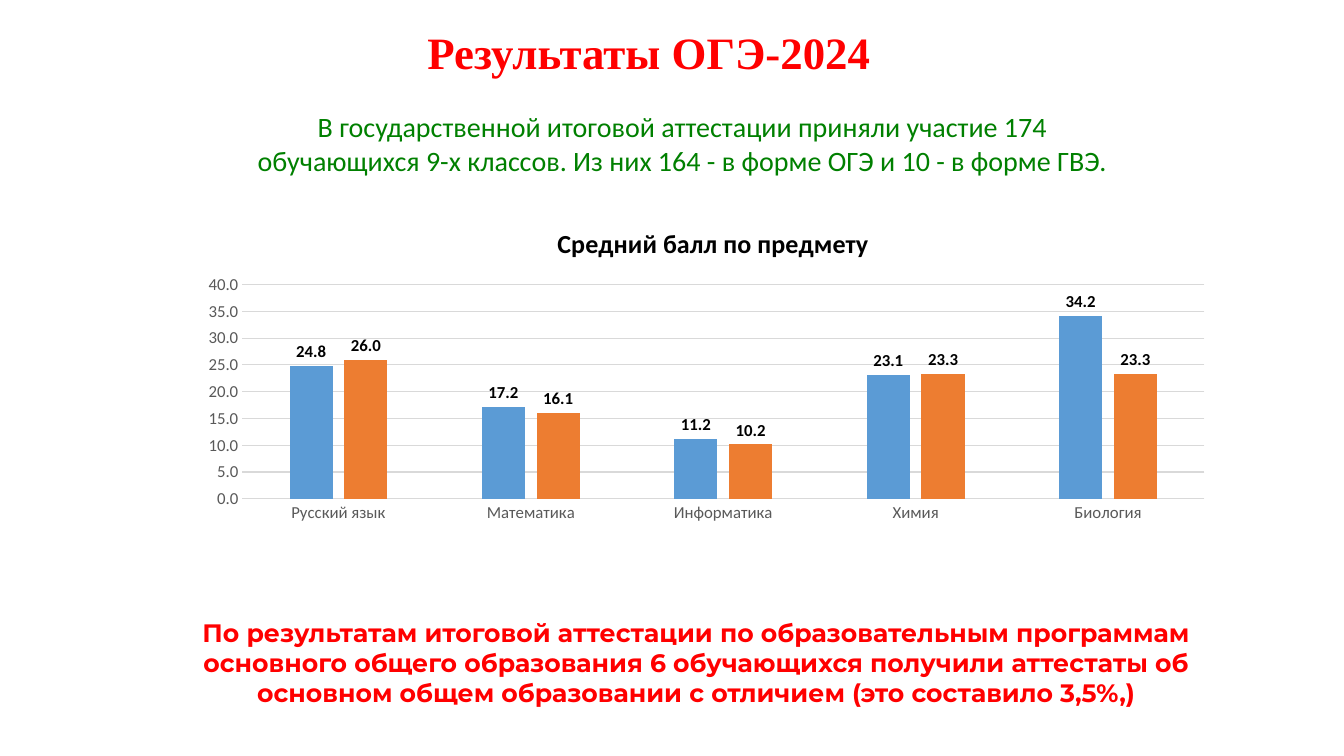
import pptx
import pptx.util
import pptx.chart.data
import pptx.dml.color
import pptx.enum.chart
import pptx.enum.text
import pptx.oxml

WIDTH, HEIGHT = 13.33, 7.5
COLORS = {"red": "FF0000", "green": "008000", "black": "000000", "gray": "595959",
          "grid": "D9D9D9", "blue": "5B9BD5", "orange": "ED7D31"}

TEXTS = [
    {"text": "Результаты ОГЭ-2024", "at": (0.99, 0.23, 10.89, 0.64), "anchor": "MIDDLE",
     "spacing": 0.9, "size": 32, "font": "Times New Roman", "color": "red", "bold": True},
    {"text": "По результатам итоговой аттестации по образовательным программам основного общего "
             "образования 6 обучающихся получили аттестаты об основном общем образовании "
             "с отличием (это составило 3,5%,)",
     "at": (1.78, 6.07, 10.25, 1.31), "anchor": "TOP",
     "spacing": 1.0, "size": 18, "font": "Montserrat", "color": "red", "bold": True},
    {"text": "В государственной итоговой аттестации приняли участие 174 обучающихся 9-х классов. "
             "Из них 164 - в форме ОГЭ и 10 - в форме ГВЭ.",
     "at": (2.44, 1.04, 8.66, 0.77), "anchor": "TOP",
     "spacing": 1.0, "size": 20, "font": "Calibri", "color": "green", "bold": False},
]
CHART_TITLE = "Средний балл по предмету"
CHART_AT = (1.89, 2.04, 10.26, 3.73)
TITLE_SHARE = {"x": 0.35, "y": 0.04}
PLOT_SHARE = {"x": 0.05, "y": 0.21, "w": 0.93, "h": 0.57}
SUBJECTS = ["Русский язык", "Математика", "Информатика", "Химия", "Биология"]
SCORES = {"blue": (24.8, 17.2, 11.2, 23.1, 34.2),
          "orange": (26, 16.1, 10.2, 23.3, 23.3)}


def rgb(name):
    return pptx.dml.color.RGBColor.from_string(COLORS[name])


def inches(lengths):
    return [pptx.util.Inches(length) for length in lengths]


def style(font, size, name, color, bold=False):
    font.size = pptx.util.Pt(size)
    font.name = name
    font.bold = bold
    font.color.rgb = rgb(color)


def add_text(page, item):
    box = page.shapes.add_textbox(*inches(item["at"]))
    frame = box.text_frame
    frame.word_wrap = True
    frame.vertical_anchor = getattr(pptx.enum.text.MSO_ANCHOR, item["anchor"])
    frame.text = item["text"]
    para = frame.paragraphs[0]
    para.alignment = pptx.enum.text.PP_ALIGN.CENTER
    para.line_spacing = item["spacing"]
    style(para.runs[0].font, item["size"], item["font"], item["color"], item["bold"])


def layout_xml(shares, inner=False):
    target = '<c:layoutTarget val="inner"/>' if inner else ""
    modes = '<c:xMode val="edge"/><c:yMode val="edge"/>'
    values = "".join(f'<c:{key} val="{share}"/>' for key, share in shares.items())
    return pptx.oxml.parse_xml(
        '<c:layout xmlns:c="http://schemas.openxmlformats.org/drawingml/2006/chart">'
        f"<c:manualLayout>{target}{modes}{values}</c:manualLayout></c:layout>")


def set_layout(parent, layout, index):
    for old in parent.xpath("./c:layout"):
        parent.remove(old)
    parent.insert(index, layout)


def style_line(line, color):
    line.color.rgb = rgb(color)
    line.width = pptx.util.Pt(0.75)


def add_scores(page):
    data = pptx.chart.data.CategoryChartData(number_format="0.0")
    data.categories = SUBJECTS
    for scores in SCORES.values():
        data.add_series("", scores)
    kind = pptx.enum.chart.XL_CHART_TYPE.COLUMN_CLUSTERED
    chart = page.shapes.add_chart(kind, *inches(CHART_AT), data).chart
    style(chart.font, 10, "Calibri", "black")
    chart.has_legend = False
    chart.has_title = True
    title = chart.chart_title
    title.text_frame.text = CHART_TITLE
    style(title.text_frame.paragraphs[0].runs[0].font, 18.6, "Calibri", "black", True)
    title.include_in_layout = False
    set_layout(title._element, layout_xml(TITLE_SHARE), 1)

    plot = chart.plots[0]
    plot.gap_width = 219
    plot.overlap = -27
    plot.vary_by_categories = False
    for series, color in zip(plot.series, SCORES):
        series.format.fill.solid()
        series.format.fill.fore_color.rgb = rgb(color)
        labels = series.data_labels
        labels.show_value = True
        labels.number_format = "0.0"
        labels.number_format_is_linked = False
        labels.position = pptx.enum.chart.XL_LABEL_POSITION.OUTSIDE_END
        style(labels.font, 12, "Calibri", "black", True)

    for axis in (chart.category_axis, chart.value_axis):
        axis.major_tick_mark = pptx.enum.chart.XL_TICK_MARK.NONE
        axis.minor_tick_mark = pptx.enum.chart.XL_TICK_MARK.NONE
        style(axis.tick_labels.font, 12, "Calibri", "gray")
    style_line(chart.category_axis.format.line, "grid")
    scale = chart.value_axis
    scale.minimum_scale, scale.maximum_scale, scale.major_unit = 0, 40, 5
    scale.tick_labels.number_format = "0.0"
    scale.tick_labels.number_format_is_linked = False
    scale.format.line.fill.background()
    style_line(scale.major_gridlines.format.line, "grid")
    plot_area = chart._chartSpace.xpath("./c:chart/c:plotArea")[0]
    set_layout(plot_area, layout_xml(PLOT_SHARE, inner=True), 0)


def main():
    deck = pptx.Presentation()
    deck.slide_width, deck.slide_height = inches((WIDTH, HEIGHT))
    page = deck.slides.add_slide(deck.slide_layouts[6])
    add_text(page, TEXTS[0])
    add_scores(page)
    for item in TEXTS[1:]:
        add_text(page, item)
    deck.save("out.pptx")


if __name__ == "__main__":
    main()
